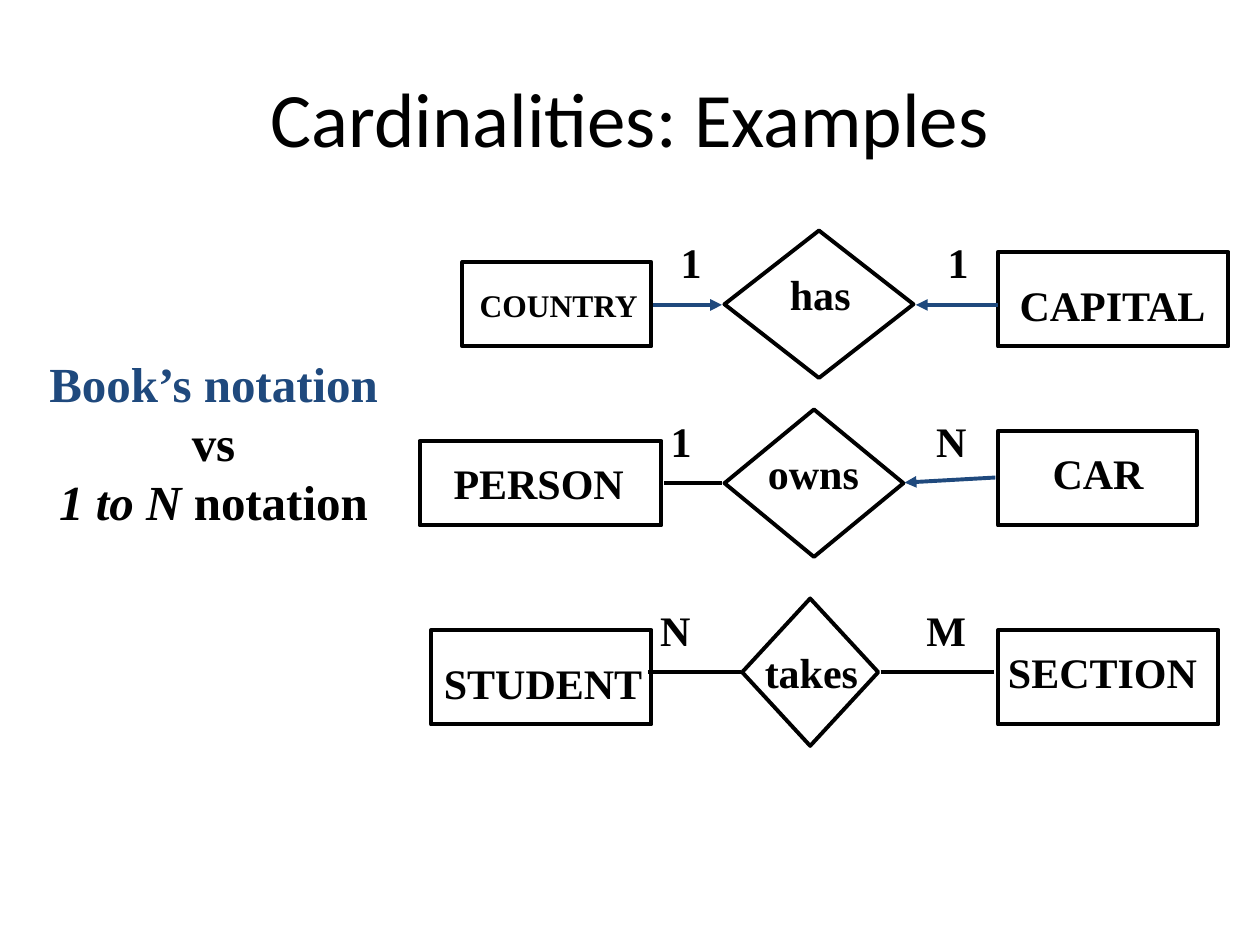
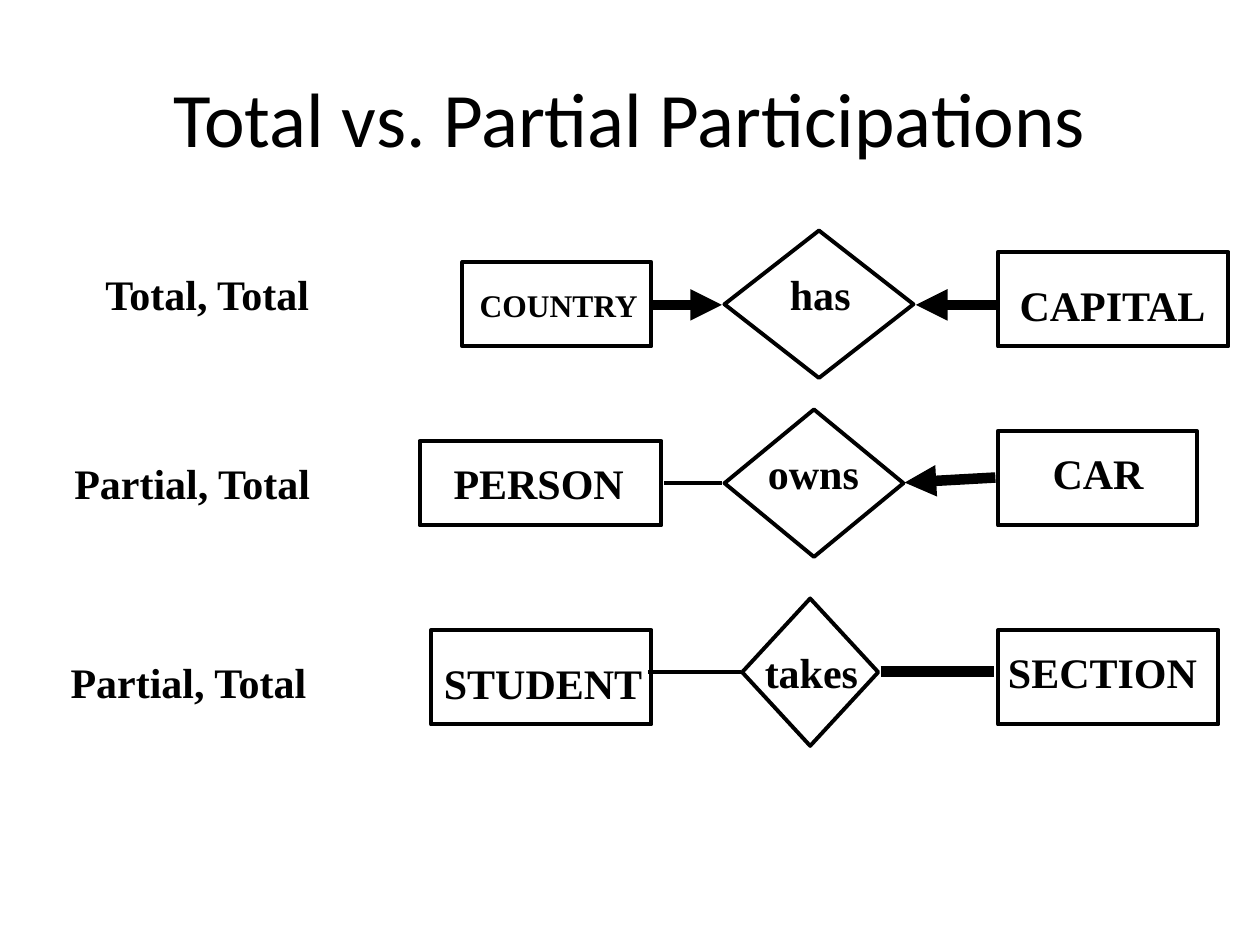
from dataclasses import dataclass

from lxml import etree
from pptx import Presentation
from pptx import util as u
from pptx.dml.color import RGBColor
from pptx.enum import shapes, text
from pptx.oxml import ns


@dataclass(frozen=True)
class Theme:
    ink: str = "000000"
    blue: str = "1F497D"
    head: str = "Calibri"
    body: str = "Times New Roman"
    title: int = 44
    note: int = 28
    label: int = 24
    small: int = 18
    thin: float = 2.25
    thick: float = 6


T = Theme()
BOX = shapes.MSO_SHAPE.RECTANGLE
GEM = shapes.MSO_SHAPE.DIAMOND

# Each part: kind, frame, word, word frame, word size
PARTS = [
    (BOX, (3.67, 2.08, 1.5, 0.67), "COUNTRY", (3.7, 2.22, 1.47, 0.4), T.small),
    (GEM, (5.75, 1.83, 1.5, 1.17), "has", (6.17, 2.08, 0.68, 0.5), T.label),
    (BOX, (7.92, 2, 1.83, 0.75), "CAPITAL", (7.98, 2.17, 1.7, 0.5), T.label),
    (BOX, (3.33, 3.5, 1.92, 0.67), "PERSON", (3.5, 3.58, 1.55, 0.5), T.label),
    (GEM, (5.75, 3.25, 1.42, 1.17), "owns", (5.99, 3.5, 0.93, 0.5), T.label),
    (BOX, (7.92, 3.42, 1.58, 0.75), "CAR", (8.25, 3.5, 0.93, 0.5), T.label),
    (BOX, (3.42, 5, 1.75, 0.75), "STUDENT", (3.42, 5.17, 1.78, 0.5), T.label),
    (GEM, (5.89, 4.75, 1.08, 1.17), "takes", (5.97, 5.08, 0.94, 0.5), T.label),
    (BOX, (7.92, 5, 1.75, 0.75), "SECTION", (7.9, 5.08, 1.7, 0.5), T.label),
]

# Each link runs from its diamond to its box: ends, arrow at the diamond
LINKS = {
    "country": ((5.73, 2.42, 5.18, 2.42), True),
    "capital": ((7.27, 2.42, 7.92, 2.42), True),
    "person": ((5.73, 3.83, 5.27, 3.83), False),
    "car": ((7.18, 3.83, 7.9, 3.79), True),
    "student": ((5.88, 5.33, 5.14, 5.33), False),
    "section": ((6.99, 5.33, 7.89, 5.33), False),
}

# Each note: frame, size, lines; a line is its colour and its (text, italic) runs
BOOK = ((0.28, 2.52, 2.83, 1.97), T.note, [
    (T.blue, [("Book’s notation", False)]),
    (T.ink, [("vs", False)]),
    (T.ink, [("1 to N", True), (" notation", False)]),
])


def plain(word, frame):
    return frame, T.label, [(T.ink, [(word, False)])]


SLIDES = [
    {
        "title": "Cardinalities: Examples",
        "marked": {"country", "capital", "car"},
        "style": (T.blue, T.thin),
        "notes": [
            BOOK,
            plain("1", (5.3, 1.83, 0.37, 0.5)),
            plain("1", (7.42, 1.83, 0.37, 0.5)),
            plain("1", (5.22, 3.25, 0.37, 0.5)),
            plain("N", (7.33, 3.25, 0.44, 0.5)),
            plain("N", (5.14, 4.75, 0.44, 0.5)),
            plain("M", (7.25, 4.75, 0.52, 0.5)),
        ],
    },
    {
        "title": "Total vs. Partial Participations",
        "marked": {"country", "capital", "car", "section"},
        "style": (T.ink, T.thick),
        "notes": [
            plain("Total, Total", (0.73, 2.08, 1.83, 0.5)),
            plain("Partial, Total", (0.48, 3.58, 2.09, 0.5)),
            plain("Partial, Total", (0.45, 5.16, 2.09, 0.5)),
        ],
    },
]


def inches(nums):
    return [u.Inches(n) for n in nums]


def stroke(line, color, width):
    line.color.rgb = RGBColor.from_string(color)
    line.width = u.Pt(width)


def write(slide, frame, size, lines, face=T.body, bold=True, wrap=False):
    box = slide.shapes.add_textbox(*inches(frame)).text_frame
    box.word_wrap = wrap
    box.vertical_anchor = text.MSO_ANCHOR.MIDDLE
    if not wrap:
        box.auto_size = text.MSO_AUTO_SIZE.SHAPE_TO_FIT_TEXT
    for i, (color, runs) in enumerate(lines):
        para = box.add_paragraph() if i else box.paragraphs[0]
        para.alignment = text.PP_ALIGN.CENTER
        font = para.font
        font.name, font.size, font.bold = face, u.Pt(size), bold
        font.color.rgb = RGBColor.from_string(color)
        for words, slant in runs:
            run = para.add_run()
            run.text = words
            if slant:
                run.font.italic = True


def outline(slide, kind, frame):
    shape = slide.shapes.add_shape(kind, *inches(frame))
    shape.shadow.inherit = False
    shape.fill.background()
    stroke(shape.line, T.ink, T.thin)


def link(slide, ends, arrow, color, width):
    line = slide.shapes.add_connector(
        shapes.MSO_CONNECTOR.STRAIGHT, *inches(ends))
    stroke(line.line, color, width)
    if arrow:
        etree.SubElement(line.get_or_add_ln(), ns.qn("a:headEnd"),
                         type="triangle")
    etree.SubElement(line.element.spPr, ns.qn("a:effectLst"))


def build(deck, page):
    slide = deck.slides.add_slide(deck.slide_layouts[6])
    write(slide, (0.5, 0.3, 9, 1.25), T.title,
          [(T.ink, [(page["title"], False)])], T.head, False, True)
    for kind, frame, word, place, size in PARTS:
        outline(slide, kind, frame)
        write(slide, place, size, [(T.ink, [(word, False)])])
    for name, (ends, arrow) in LINKS.items():
        style = page["style"] if name in page["marked"] else (T.ink, T.thin)
        link(slide, ends, arrow, *style)
    for note in page["notes"]:
        write(slide, *note)


def main():
    deck = Presentation()
    deck.slide_width, deck.slide_height = inches((10, 7.5))
    for page in SLIDES:
        build(deck, page)
    deck.save("out.pptx")


if __name__ == "__main__":
    main()
